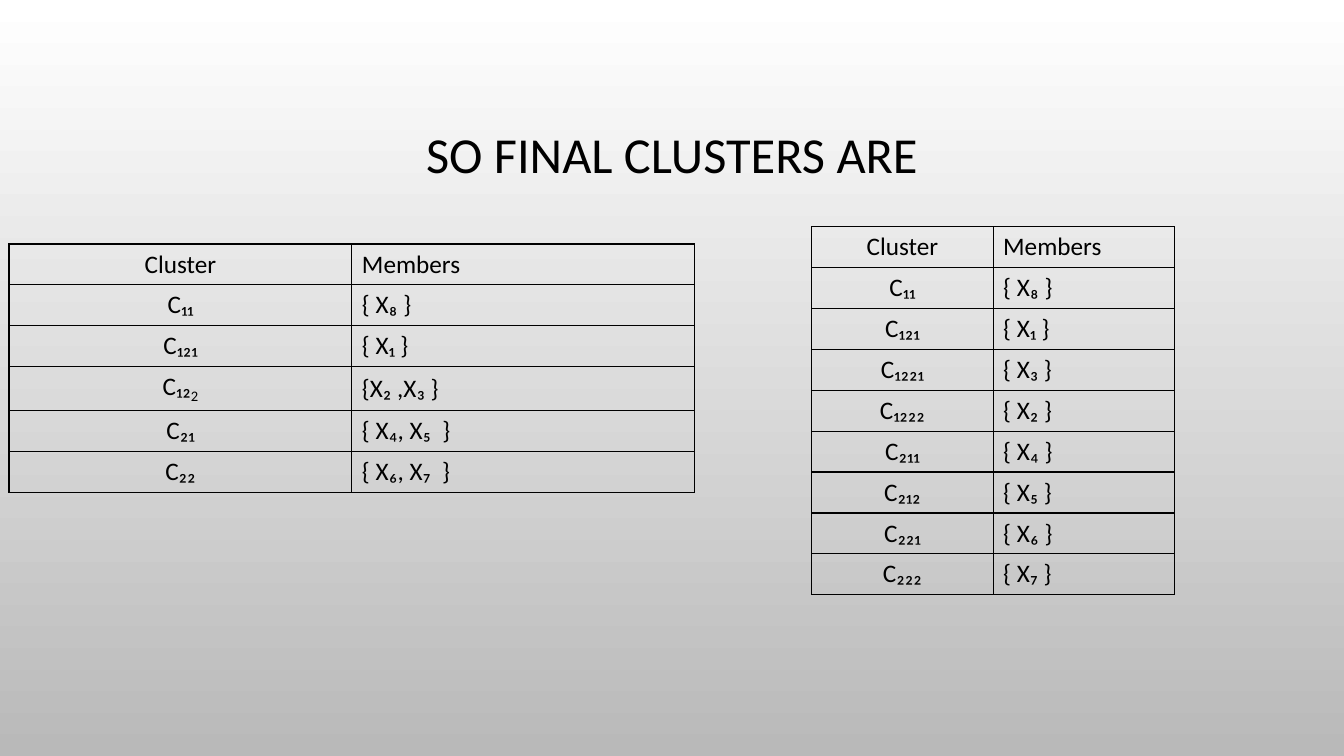
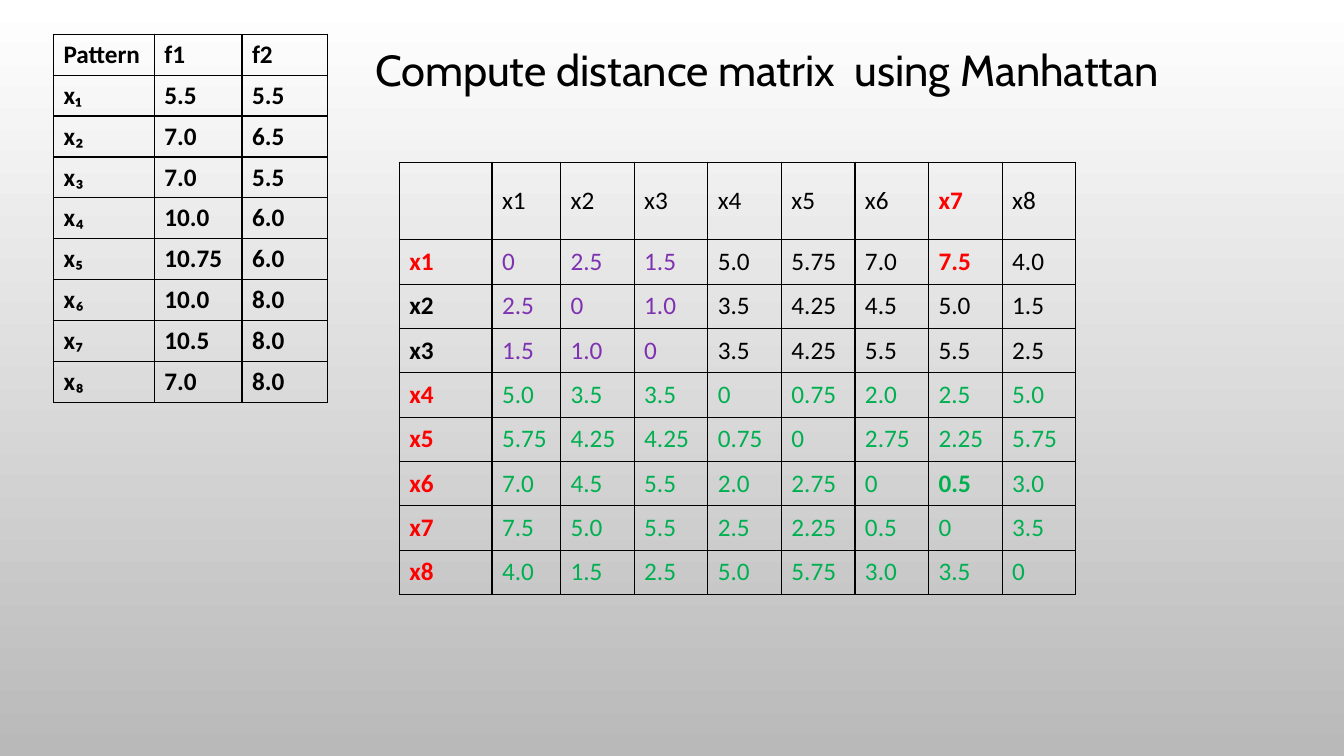
"""Build two slides on divisive clustering: the final clusters and the distance matrix."""
from collections.abc import Callable
from dataclasses import dataclass

from lxml import etree
from pptx import Presentation
from pptx.dml.color import RGBColor
from pptx.enum.text import MSO_ANCHOR, MSO_AUTO_SIZE, PP_ALIGN
from pptx.oxml.ns import qn
from pptx.presentation import Presentation as Deck
from pptx.slide import Slide
from pptx.table import _Cell
from pptx.util import Inches, Pt

MIDDLE = MSO_ANCHOR.MIDDLE
NO_AUTOFIT = MSO_AUTO_SIZE.NONE
LEFT, CENTER = PP_ALIGN.LEFT, PP_ALIGN.CENTER

COLORS = {
    "ink": "000000",
    "sky": "FFFFFF",
    "ground": "B9B9B9",
    "farthest": "FF0000",
    "near": "7E32B0",
    "split": "00B050",
}
TABLE_FONT = "Calibri"
TABLE_SIZE = 18
BORDER_WIDTH = 1
ROW_HEIGHT = 0.4
TITLE_ONLY = 5


@dataclass(frozen=True)
class Look:
    color: str = "ink"
    bold: bool = False
    align: PP_ALIGN = LEFT


@dataclass(frozen=True)
class Title:
    text: str
    box: tuple[float, float, float, float]
    font: str
    size: int
    align: PP_ALIGN


@dataclass(frozen=True)
class Grid:
    left: float
    top: float
    columns: list[float]
    row_heights: list[float]
    rows: list[list[str]]
    look: Callable[[int, int], Look]


def rgb(name: str) -> RGBColor:
    return RGBColor.from_string(COLORS[name])


def cluster_look(row: int, column: int) -> Look:
    return Look(align=CENTER if column == 0 else LEFT)


def pattern_look(row: int, column: int) -> Look:
    return Look(bold=True)


def distance_look(row: int, column: int) -> Look:
    if (row, column) in ((0, 7), (1, 7)):
        return Look("farthest", True)
    if row == 0:
        return Look()
    if column == 0:
        return Look("ink" if row in (2, 3) else "farthest", True)
    if row > 3:
        return Look("split", (row, column) == (6, 7))
    return Look("near" if column <= 3 else "ink")


def set_background(deck: Deck) -> None:
    fill = deck.slide_master.background.fill
    fill.gradient()
    fill.gradient_angle = 270
    for stop, position, name in zip(fill.gradient_stops, (0, 1), ("sky", "ground")):
        stop.position = position
        stop.color.rgb = rgb(name)


def add_slide(deck: Deck, title: Title) -> Slide:
    slide = deck.slides.add_slide(deck.slide_layouts[TITLE_ONLY])
    heading = slide.shapes.title
    heading.left, heading.top, heading.width, heading.height = map(Inches, title.box)
    frame = heading.text_frame
    frame.text = title.text
    frame.auto_size = NO_AUTOFIT
    frame.word_wrap = True
    frame.vertical_anchor = MIDDLE
    paragraph = frame.paragraphs[0]
    paragraph.alignment = title.align
    paragraph.line_spacing = 0.9
    font = paragraph.runs[0].font
    font.name, font.size = title.font, Pt(title.size)
    font.color.rgb = rgb("ink")
    return slide


def draw_borders(cell: _Cell) -> None:
    properties = cell._tc.get_or_add_tcPr()
    for side in ("a:lnL", "a:lnR", "a:lnT", "a:lnB"):
        line = etree.SubElement(properties, qn(side), w=str(Pt(BORDER_WIDTH)))
        solid = etree.SubElement(line, qn("a:solidFill"))
        etree.SubElement(solid, qn("a:srgbClr"), val=COLORS["ink"])


def fill_cell(cell: _Cell, text: str, look: Look) -> None:
    draw_borders(cell)
    cell.fill.background()
    cell.vertical_anchor = MIDDLE
    paragraph = cell.text_frame.paragraphs[0]
    paragraph.alignment = look.align
    base, _, subscript = text.partition("_")
    for part in filter(None, (base, subscript)):
        run = paragraph.add_run()
        run.text = part
        font = run.font
        font.name, font.size, font.bold = TABLE_FONT, Pt(TABLE_SIZE), look.bold
        font.color.rgb = rgb(look.color)
    if subscript:
        run._r.get_or_add_rPr().set("baseline", "-25000")


def add_grid(slide: Slide, grid: Grid) -> None:
    frame = slide.shapes.add_table(
        len(grid.rows), len(grid.columns), Inches(grid.left), Inches(grid.top),
        Inches(sum(grid.columns)), Inches(sum(grid.row_heights)))
    table = frame.table
    table.first_row = table.horz_banding = False
    for column, width in zip(table.columns, grid.columns):
        column.width = Inches(width)
    for row, height in zip(table.rows, grid.row_heights):
        row.height = Inches(height)
    for r, texts in enumerate(grid.rows):
        for c, text in enumerate(texts):
            fill_cell(table.cell(r, c), text, grid.look(r, c))


CLUSTER_HEADER = ["Cluster", "Members"]
FIRST_CLUSTERS = [
    CLUSTER_HEADER,
    ["C₁₁", "{ X₈ }"],
    ["C₁₂₁", "{ X₁ }"],
    ["C₁₂_2", "{X₂ ,X₃ }"],
    ["C₂₁", "{ X₄, X₅  }"],
    ["C₂₂", "{ X₆, X₇  }"],
]
FINAL_CLUSTERS = [
    CLUSTER_HEADER,
    ["C₁₁", "{ X₈ }"],
    ["C₁₂₁", "{ X₁ }"],
    ["C₁₂₂₁", "{ X₃ }"],
    ["C₁₂₂₂", "{ X₂ }"],
    ["C₂₁₁", "{ X₄ }"],
    ["C₂₁₂", "{ X₅ }"],
    ["C₂₂₁", "{ X₆ }"],
    ["C₂₂₂", "{ X₇ }"],
]
PATTERNS = [
    ["Pattern", "f1", "f2"],
    ["x₁", "5.5", "5.5"],
    ["x₂", "7.0", "6.5"],
    ["x₃", "7.0", "5.5"],
    ["x₄", "10.0", "6.0"],
    ["x₅", "10.75", "6.0"],
    ["x₆", "10.0", "8.0"],
    ["x₇", "10.5", "8.0"],
    ["x₈", "7.0", "8.0"],
]
POINTS = [f"x{number}" for number in range(1, 9)]
DISTANCES = [
    "0 2.5 1.5 5.0 5.75 7.0 7.5 4.0",
    "2.5 0 1.0 3.5 4.25 4.5 5.0 1.5",
    "1.5 1.0 0 3.5 4.25 5.5 5.5 2.5",
    "5.0 3.5 3.5 0 0.75 2.0 2.5 5.0",
    "5.75 4.25 4.25 0.75 0 2.75 2.25 5.75",
    "7.0 4.5 5.5 2.0 2.75 0 0.5 3.0",
    "7.5 5.0 5.5 2.5 2.25 0.5 0 3.5",
    "4.0 1.5 2.5 5.0 5.75 3.0 3.5 0",
]
DISTANCE_ROWS = [["", *POINTS]] + [
    [point, *distances.split()] for point, distances in zip(POINTS, DISTANCES)]

SLIDES = [
    (Title("SO FINAL CLUSTERS ARE", (1, 0.68, 11.33, 1.75), "Calibri", 36, CENTER), [
        Grid(0.09, 2.42, [3.4] * 2, [ROW_HEIGHT] * 6, FIRST_CLUSTERS, cluster_look),
        Grid(8.05, 2.25, [1.8] * 2, [ROW_HEIGHT] * 9, FINAL_CLUSTERS, cluster_look),
    ]),
    (Title("Compute distance matrix  using Manhattan", (3.62, 0.34, 9.71, 0.76),
           "Cabin", 31, LEFT), [
        Grid(0.53, 0.34, [1, 0.87, 0.85], [ROW_HEIGHT] * 9, PATTERNS, pattern_look),
        Grid(3.96, 1.61, [0.92, 0.68] + [0.73] * 7, [0.77] + [0.44] * 8,
             DISTANCE_ROWS, distance_look),
    ]),
]


def main() -> None:
    deck = Presentation()
    deck.slide_width, deck.slide_height = Inches(13.33), Inches(7.5)
    set_background(deck)
    for title, grids in SLIDES:
        slide = add_slide(deck, title)
        for grid in grids:
            add_grid(slide, grid)
    deck.save("out.pptx")


if __name__ == "__main__":
    main()
